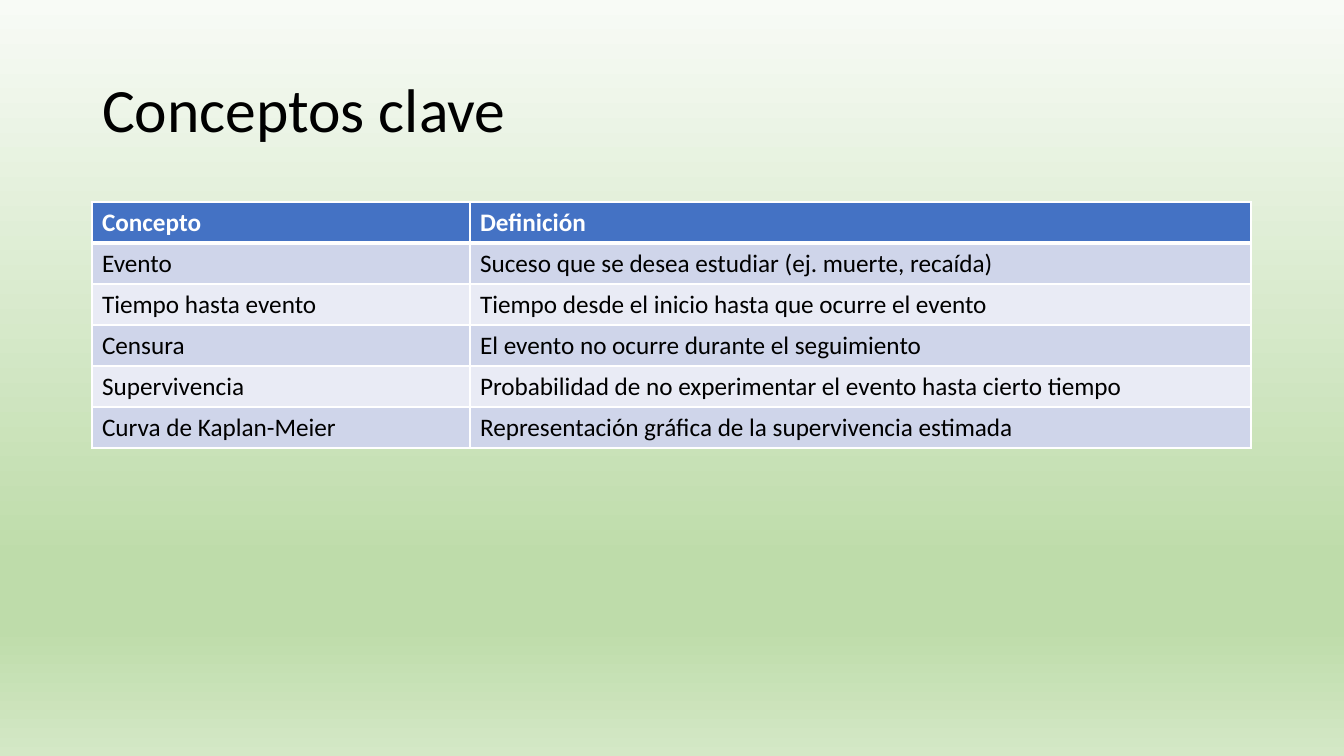
from lxml import etree
from pptx import Presentation
from pptx.dml.color import RGBColor
from pptx.enum.text import MSO_ANCHOR, PP_ALIGN
from pptx.oxml.ns import qn
from pptx.util import Pt

LEFT = PP_ALIGN.LEFT
MIDDLE = MSO_ANCHOR.MIDDLE

EMU_PER_PX = 12192000 / 1344
SLIDE_SIZE = (1344, 756)
TITLE_BOX = (92, 40, 1159, 146)
TABLE_LEFT, TABLE_TOP = 92, 202
COLUMN_WIDTHS = (378, 781)
ROW_HEIGHT = 41
TITLE_ONLY = 5
FONT = "Calibri"

COLORS = {
    "text": "000000",
    "header_text": "FFFFFF",
    "header": "4472C4",
    "band_dark": "CFD5EA",
    "band_light": "E9EBF5",
    "border": "FFFFFF",
    "pale": "F8FBF6",
    "green": "BEDCAA",
    "mint": "D4E8C6",
}
BACKGROUND_STOPS = ((0, "pale"), (74, "green"), (83, "green"), (100, "mint"))

CONCEPTS = (
    ("Concepto", "Definición"),
    ("Evento", "Suceso que se desea estudiar (ej. muerte, recaída)"),
    ("Tiempo hasta evento", "Tiempo desde el inicio hasta que ocurre el evento"),
    ("Censura", "El evento no ocurre durante el seguimiento"),
    ("Supervivencia", "Probabilidad de no experimentar el evento hasta cierto tiempo"),
    ("Curva de Kaplan-Meier", "Representación gráfica de la supervivencia estimada"),
)


def px(length):
    return round(length * EMU_PER_PX)


def set_font(paragraph, size, color, bold=False):
    font = paragraph.font
    font.name, font.size, font.bold = FONT, Pt(size), bold
    font.color.rgb = RGBColor.from_string(COLORS[color])


def add_color(parent, color):
    etree.SubElement(parent, qn("a:srgbClr"), val=COLORS[color])


def paint_background(slide):
    fill = slide.background.fill
    fill.gradient()
    fill.gradient_angle = 270  # top to bottom
    stops = next(slide.element.iter(qn("a:gsLst")))
    for stop in list(stops):
        stops.remove(stop)
    for percent, color in BACKGROUND_STOPS:
        add_color(etree.SubElement(stops, qn("a:gs"), pos=str(percent * 1000)), color)


def write_title(slide, text):
    title = slide.shapes.title
    title.left, title.top, title.width, title.height = map(px, TITLE_BOX)
    frame = title.text_frame
    frame.text = text
    frame.vertical_anchor = MIDDLE
    heading = frame.paragraphs[0]
    heading.alignment = LEFT
    heading.line_spacing = 0.9
    set_font(heading, 44, "text")


def add_borders(cell, top, bottom):
    properties = cell._tc.get_or_add_tcPr()
    for side, width in (("L", 1), ("R", 1), ("T", top), ("B", bottom)):
        line = etree.SubElement(properties, qn(f"a:ln{side}"), w=str(Pt(width)))
        add_color(etree.SubElement(line, qn("a:solidFill")), "border")


def format_cell(cell, text, row):
    is_header = row == 0
    if is_header:
        band = "header"
    else:
        band = "band_dark" if row % 2 else "band_light"
    # Borders come before the fill in the cell properties
    add_borders(cell, top=3 if row == 1 else 1, bottom=3 if is_header else 1)
    cell.fill.solid()
    cell.fill.fore_color.rgb = RGBColor.from_string(COLORS[band])
    cell.text = text
    set_font(cell.text_frame.paragraphs[0], 18,
             "header_text" if is_header else "text", is_header)


def add_concept_table(slide):
    frame = slide.shapes.add_table(
        len(CONCEPTS), len(COLUMN_WIDTHS), px(TABLE_LEFT), px(TABLE_TOP),
        px(sum(COLUMN_WIDTHS)), px(ROW_HEIGHT * len(CONCEPTS)))
    table = frame.table
    for column, width in zip(table.columns, COLUMN_WIDTHS):
        column.width = px(width)
    for row, entry in enumerate(CONCEPTS):
        table.rows[row].height = px(ROW_HEIGHT)
        for column, text in enumerate(entry):
            format_cell(table.cell(row, column), text, row)


def main():
    deck = Presentation()
    deck.slide_width, deck.slide_height = map(px, SLIDE_SIZE)
    slide = deck.slides.add_slide(deck.slide_layouts[TITLE_ONLY])
    paint_background(slide)
    write_title(slide, "Conceptos clave")
    add_concept_table(slide)
    deck.save("out.pptx")


if __name__ == "__main__":
    main()
